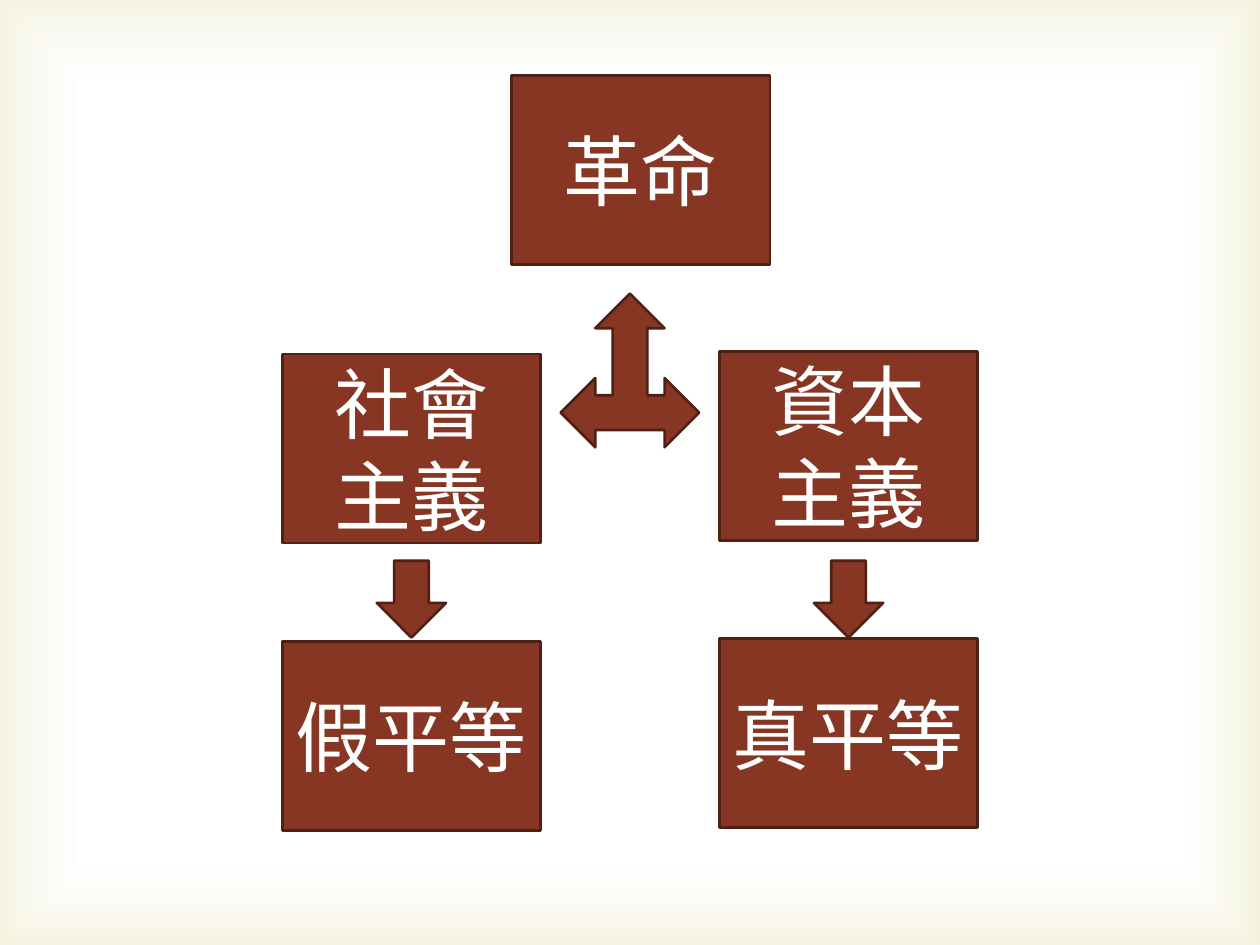
from lxml import etree
from pptx import Presentation
from pptx.dml.color import RGBColor
from pptx.enum.shapes import MSO_SHAPE
from pptx.enum.text import MSO_ANCHOR, PP_ALIGN
from pptx.util import Inches, Pt

RECT = MSO_SHAPE.RECTANGLE
PROCESS = MSO_SHAPE.FLOWCHART_PROCESS
DOWN = MSO_SHAPE.DOWN_ARROW
THREE_WAY = MSO_SHAPE.LEFT_RIGHT_UP_ARROW
MIDDLE = MSO_ANCHOR.MIDDLE
CENTER = PP_ALIGN.CENTER

COLORS = {"fill": "873624", "line": "4F2015", "text": "FFFFFF",
          "inner": "FFFFFF", "edge": "D1CA75"}
FONT = "Cambria"
BOX_W, BOX_H = 2.05, 1.5
ARROW_W, ARROW_H = 0.55, 0.61
NS = "http://schemas.openxmlformats.org/drawingml/2006/main"


def color(name):
    return RGBColor.from_string(COLORS[name])


def add_frame(slide, width, height):
    """Soft tinted border that fades to the white middle."""
    shape = slide.shapes.add_shape(RECT, 0, 0, width, height)
    shape.shadow.inherit = False
    shape.line.fill.background()
    shape.fill.background()
    stops = "".join(
        f'<a:gs pos="{pos}000"><a:srgbClr val="{COLORS[name]}">'
        f'<a:alpha val="{alpha}000"/></a:srgbClr></a:gs>'
        for pos, name, alpha in ((83, "inner", 11), (100, "edge", 23)))
    grad = etree.fromstring(
        f'<a:gradFill xmlns:a="{NS}" rotWithShape="1"><a:gsLst>{stops}</a:gsLst>'
        '<a:path path="rect"><a:fillToRect l="50000" t="50000" r="50000" b="50000"/>'
        '</a:path></a:gradFill>')
    props = shape.element.spPr
    props.replace(props.find(f"{{{NS}}}noFill"), grad)


def add_block(slide, kind, left, top, width, height):
    shape = slide.shapes.add_shape(
        kind, Inches(left), Inches(top), Inches(width), Inches(height))
    shape.shadow.inherit = False
    shape.fill.solid()
    shape.fill.fore_color.rgb = color("fill")
    shape.line.color.rgb = color("line")
    shape.line.width = Pt(1.5)
    return shape


def add_box(slide, text, left, top):
    frame = add_block(slide, PROCESS, left, top, BOX_W, BOX_H).text_frame
    frame.word_wrap = True
    frame.vertical_anchor = MIDDLE
    frame.text = text
    for para in frame.paragraphs:
        para.alignment = CENTER
        for run in para.runs:
            run.font.name = FONT
            run.font.size = Pt(44)
            run.font.color.rgb = color("text")


def add_branch(slide, left, top, cause, result):
    """A box, a down arrow and the box it leads to."""
    add_box(slide, cause, left, top)
    add_box(slide, result, left, top + 2.28)
    add_block(slide, DOWN, left + (BOX_W - ARROW_W) / 2, 4.45, ARROW_W, ARROW_H)


def main():
    deck = Presentation()
    deck.slide_width, deck.slide_height = Inches(10), Inches(7.5)
    slide = deck.slides.add_slide(deck.slide_layouts[6])

    # Background
    add_frame(slide, deck.slide_width, deck.slide_height)

    # Root and three-way arrow
    add_box(slide, "革命", 4.06, 0.6)
    add_block(slide, THREE_WAY, 4.45, 2.33, 1.1, 1.22)

    # Two branches
    add_branch(slide, 2.24, 2.81, "社會\n主義", "假平等")
    add_branch(slide, 5.71, 2.79, "資本\n主義", "真平等")

    deck.save("out.pptx")


if __name__ == "__main__":
    main()
